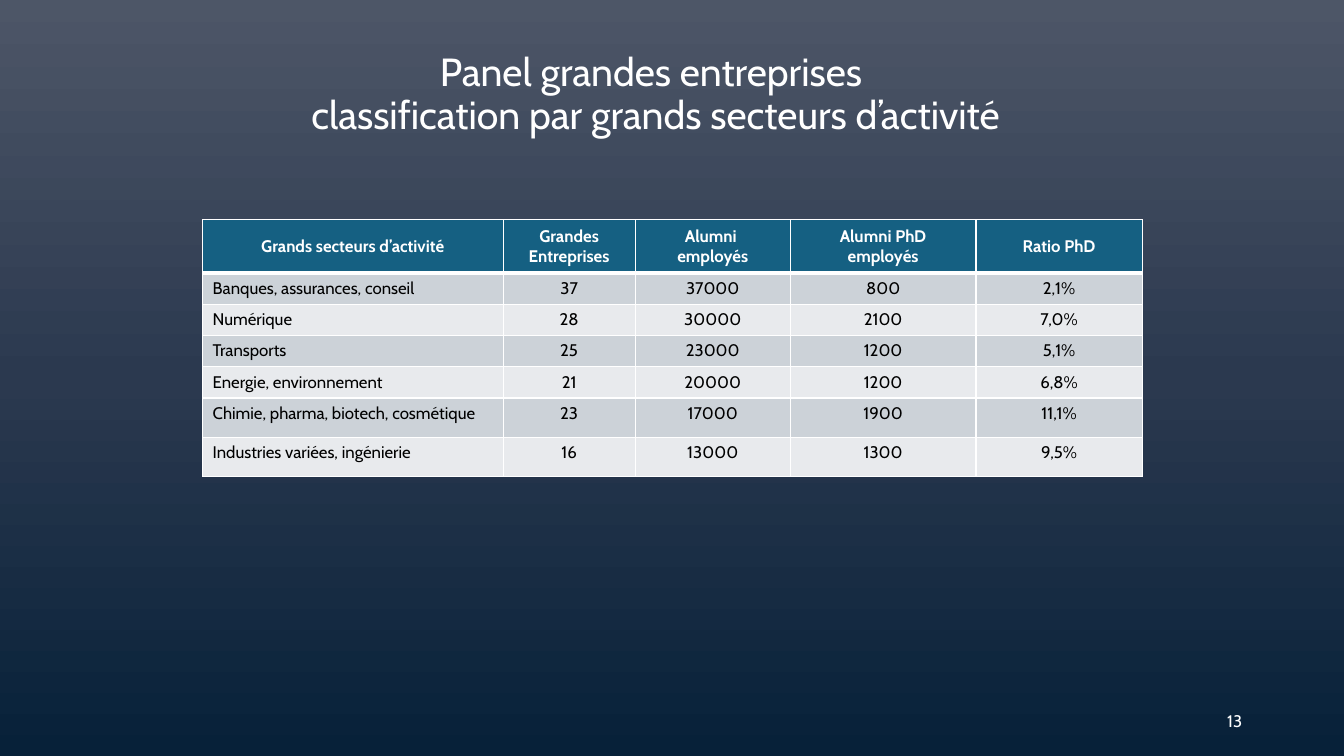
from copy import deepcopy

from lxml.etree import SubElement
from pptx import Presentation
from pptx.dml.color import RGBColor
from pptx.enum.text import MSO_ANCHOR, MSO_AUTO_SIZE, PP_ALIGN
from pptx.oxml.ns import qn
from pptx.util import Inches, Pt

FONT = "Cabin"
WHITE, BLACK = "FFFFFF", "000000"
HEADER_FILL = "156082"
BAND_FILLS = ("CCD2D8", "E8EAED")
GRADIENT = ((0, "4D5667"), (0.5, "2B394F"), (1, "072139"))

COLUMN_WIDTHS = (2.98, 1.31, 1.54, 1.84, 1.65)
ROW_HEIGHTS = (0.53,) + (0.31,) * 4 + (0.39,) * 2
SECTORS = (
    ("Grands secteurs d’activité", "Grandes\nEntreprises", "Alumni \nemployés",
     "Alumni PhD\nemployés", "Ratio PhD"),
    ("Banques, assurances, conseil", "37", "37000", "800", "2,1%"),
    ("Numérique", "28", "30000", "2100", "7,0%"),
    ("Transports", "25", "23000", "1200", "5,1%"),
    ("Energie, environnement", "21", "20000", "1200", "6,8%"),
    ("Chimie, pharma, biotech, cosmétique", "23", "17000", "1900", "11,1%"),
    ("Industries variées, ingénierie", "16", "13000", "1300", "9,5%"),
)


def color(hex_value):
    return RGBColor.from_string(hex_value)


def style_text(frame, size, hex_value, align, bold=False):
    for paragraph in frame.paragraphs:
        paragraph.alignment = align
        paragraph.font.name = FONT
        paragraph.font.size = Pt(size)
        paragraph.font.bold = bold
        paragraph.font.color.rgb = color(hex_value)


def place(shape, left, top, width, height):
    shape.left, shape.top = Inches(left), Inches(top)
    shape.width, shape.height = Inches(width), Inches(height)


def paint_background(slide):
    fill = slide.background.fill
    fill.gradient()
    fill.gradient_angle = 270
    stop_list = slide.element.xpath(".//a:gsLst")[0]
    stop_list.append(deepcopy(stop_list[0]))
    for stop, (position, hex_value) in zip(fill.gradient_stops, GRADIENT):
        stop.position = position
        stop.color.rgb = color(hex_value)


def add_title(slide, text):
    title = slide.shapes.title
    place(title, 0.41, 0.58, 12.18, 0.73)
    frame = title.text_frame
    frame.text = text
    frame.word_wrap = True
    frame.auto_size = MSO_AUTO_SIZE.NONE
    frame.vertical_anchor = MSO_ANCHOR.MIDDLE
    style_text(frame, 28, WHITE, PP_ALIGN.CENTER)
    frame.paragraphs[0].line_spacing = 0.9


def set_borders(cell, top, bottom):
    properties = cell._tc.get_or_add_tcPr()
    for side, width in (("L", 1), ("R", 1), ("T", top), ("B", bottom)):
        line = SubElement(properties, qn(f"a:ln{side}"), w=str(Pt(width)))
        fill = SubElement(line, qn("a:solidFill"))
        SubElement(fill, qn("a:srgbClr"), val=WHITE)


def fill_cell(cell, text, row, column):
    header = row == 0
    cell.text = text
    centred = header or column > 0
    style_text(cell.text_frame, 12, WHITE if header else BLACK,
               PP_ALIGN.CENTER if centred else PP_ALIGN.LEFT, bold=header)
    cell.vertical_anchor = MSO_ANCHOR.MIDDLE if header else MSO_ANCHOR.TOP
    # Borders come before the fill in the cell properties
    set_borders(cell, top=3 if row == 1 else 1, bottom=3 if header else 1)
    cell.fill.solid()
    cell.fill.fore_color.rgb = color(HEADER_FILL if header else BAND_FILLS[(row - 1) % 2])


def add_sector_table(slide):
    table = slide.shapes.add_table(
        len(ROW_HEIGHTS), len(COLUMN_WIDTHS), Inches(2.01), Inches(2.18),
        Inches(sum(COLUMN_WIDTHS)), Inches(sum(ROW_HEIGHTS))).table
    for column, width in zip(table.columns, COLUMN_WIDTHS):
        column.width = Inches(width)
    for row, height in zip(table.rows, ROW_HEIGHTS):
        row.height = Inches(height)
    for row, values in enumerate(SECTORS):
        for column, text in enumerate(values):
            fill_cell(table.cell(row, column), text, row, column)


def add_page_number(slide, number):
    box = slide.shapes.add_textbox(Inches(9.42), Inches(6.95), Inches(3), Inches(0.4))
    frame = box.text_frame
    frame.text = number
    frame.word_wrap = True
    frame.vertical_anchor = MSO_ANCHOR.MIDDLE
    style_text(frame, 12, WHITE, PP_ALIGN.RIGHT)


def main():
    presentation = Presentation()
    presentation.slide_width = Inches(13.33)
    presentation.slide_height = Inches(7.5)
    slide = presentation.slides.add_slide(presentation.slide_layouts.get_by_name("Title Only"))

    paint_background(slide)
    add_title(slide, "Panel grandes entreprises \vclassification par grands secteurs d’activité")
    add_sector_table(slide)
    add_page_number(slide, "13")
    presentation.save("out.pptx")


if __name__ == "__main__":
    main()
